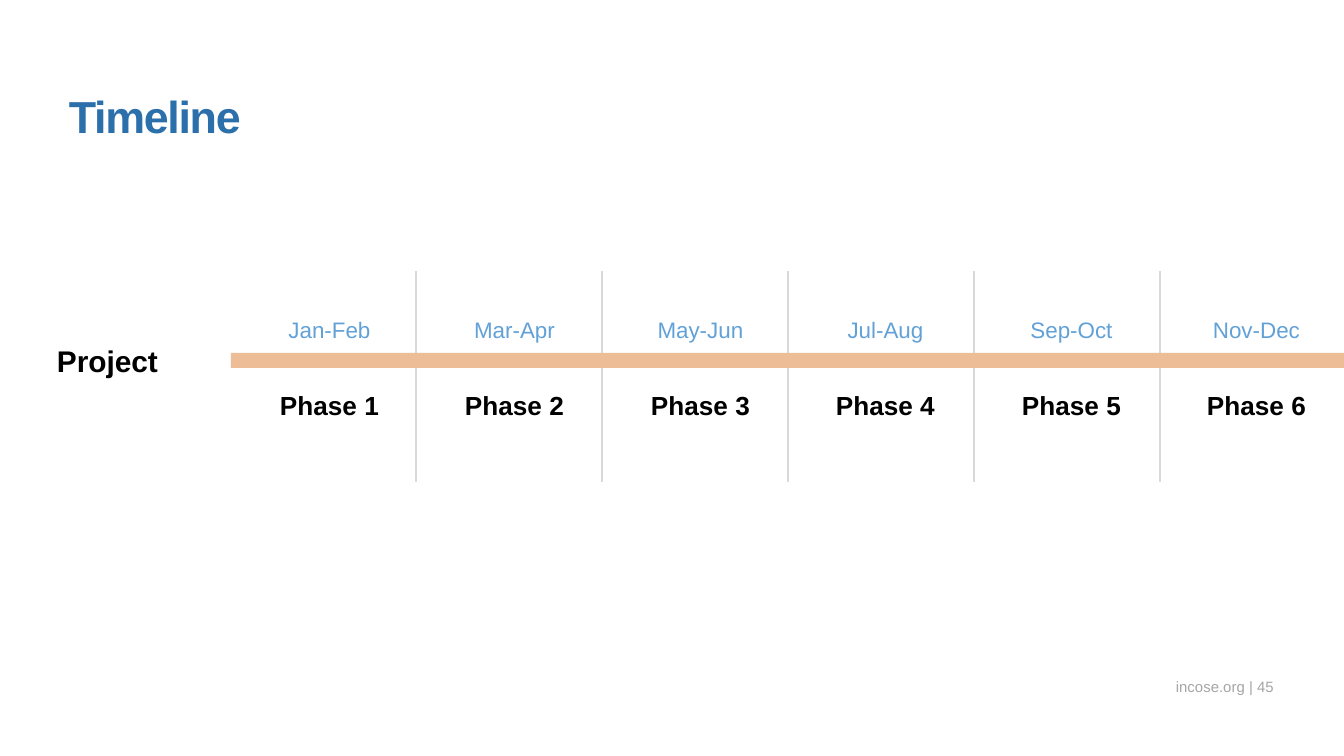
"""Build a project timeline slide with six two-month phases."""
from typing import NamedTuple

from pptx import Presentation
from pptx import util as u
from pptx.dml.color import RGBColor
from pptx.enum import shapes, text
from pptx.oxml import parse_xml
from pptx.oxml.ns import nsdecls

SCALE = 914400 / 134.4
FONT = "Arial"
BLACK, SKY, BLUE = "000000", "61A1D7", "2B6FAB"
GREY, RULE, PEACH = "A5A5A5", "D9D9D9", "EDBD97"


class Box(NamedTuple):
    left: int
    top: int
    width: int
    height: int


class Phase(NamedTuple):
    name: str
    months: str


PHASES = [
    Phase("Phase 1", "Jan-Feb"),
    Phase("Phase 2", "Mar-Apr"),
    Phase("Phase 3", "May-Jun"),
    Phase("Phase 4", "Jul-Aug"),
    Phase("Phase 5", "Sep-Oct"),
    Phase("Phase 6", "Nov-Dec"),
]


def px(n: int) -> u.Emu:
    return u.Emu(round(n * SCALE))


def rgb(code: str) -> RGBColor:
    return RGBColor.from_string(code)


def write(shape, words: str, *, size: int, color: str, bold: bool = False,
          align=text.PP_ALIGN.CENTER, anchor=text.MSO_ANCHOR.TOP,
          inset=(13, 7, 7, 7), wrap: bool = False, track: int = 0,
          lead: float = 1.0) -> None:
    frame = shape.text_frame
    frame.auto_size = text.MSO_AUTO_SIZE.NONE
    frame.word_wrap = wrap
    frame.vertical_anchor = anchor
    (frame.margin_left, frame.margin_top,
     frame.margin_right, frame.margin_bottom) = map(px, inset)
    para = frame.paragraphs[0]
    para.alignment, para.line_spacing = align, lead
    para.space_before = u.Pt(0)
    run = para.add_run()
    run.text = words
    font = run.font
    font.name, font.size, font.bold = FONT, u.Pt(size), bold
    font.color.rgb = rgb(color)
    if track:
        font._element.set("spc", str(track))


def label(slide, box: Box, words: str, **form) -> None:
    write(slide.shapes.add_textbox(*map(px, box)), words, **form)


def rule(slide, x: int, top: int, base: int) -> None:
    line = slide.shapes.add_connector(
        shapes.MSO_CONNECTOR.STRAIGHT, px(x), px(base), px(x), px(top))
    line.line.color.rgb = rgb(RULE)
    line.line.width = u.Pt(1)
    line._element.spPr.append(parse_xml(f"<a:effectLst {nsdecls('a')}/>"))


def bar(slide, box: Box) -> None:
    rect = slide.shapes.add_shape(shapes.MSO_SHAPE.RECTANGLE, *map(px, box))
    rect.shadow.inherit = False
    rect.fill.solid()
    rect.fill.fore_color.rgb = rgb(PEACH)
    rect.line.fill.background()


def main() -> None:
    deck = Presentation()
    deck.slide_width, deck.slide_height = px(1344), px(756)
    slide = deck.slides.add_slide(deck.slide_layouts[5])

    title = slide.shapes.title
    title.left, title.top, title.width, title.height = map(
        px, Box(69, 88, 1208, 54))
    write(title, "Timeline", size=24, color=BLUE, bold=True, track=-70,
          align=text.PP_ALIGN.LEFT, anchor=text.MSO_ANCHOR.BOTTOM,
          inset=(0, 0, 0, 0), wrap=True)

    for i in range(len(PHASES) - 1):
        rule(slide, 416 + 186 * i, 271, 482)
    bar(slide, Box(231, 353, 1113, 15))

    for i, phase in enumerate(PHASES):
        left = 270 + 371 * i // 2
        label(slide, Box(left, 309, 113, 39), phase.months,
              size=12, color=SKY)
        label(slide, Box(left, 382, 113, 39), phase.name,
              size=14, color=BLACK, bold=True)
    label(slide, Box(48, 336, 113, 39), "Project",
          size=16, color=BLACK, bold=True)

    label(slide, Box(1122, 671, 152, 25), "incose.org | 45", size=8,
          color=GREY, align=text.PP_ALIGN.RIGHT,
          anchor=text.MSO_ANCHOR.BOTTOM, inset=(0, 0, 0, 0), wrap=True,
          lead=1.5)
    deck.save("out.pptx")


if __name__ == "__main__":
    main()
